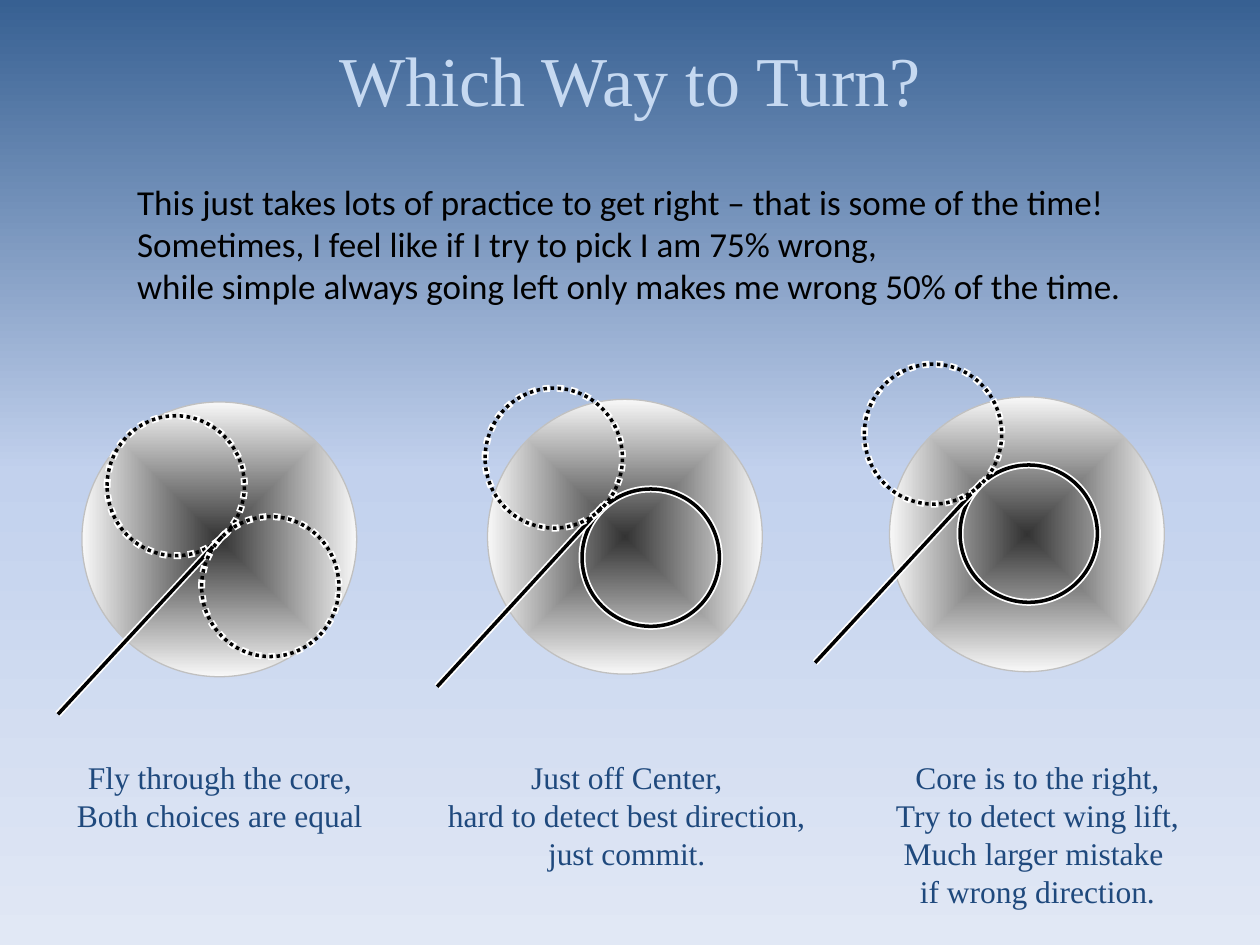
from lxml import etree
from pptx import Presentation
from pptx.dml.color import RGBColor
from pptx.enum.dml import MSO_LINE
from pptx.enum.shapes import MSO_CONNECTOR, MSO_SHAPE
from pptx.enum.text import MSO_ANCHOR, MSO_AUTO_SIZE, PP_ALIGN
from pptx.oxml.ns import qn
from pptx.util import Pt

OVAL = MSO_SHAPE.OVAL
STRAIGHT = MSO_CONNECTOR.STRAIGHT
DOTTED = MSO_LINE.ROUND_DOT
CENTER = PP_ALIGN.CENTER
LEFT = PP_ALIGN.LEFT
MIDDLE = MSO_ANCHOR.MIDDLE
TOP = MSO_ANCHOR.TOP
GROW = MSO_AUTO_SIZE.SHAPE_TO_FIT_TEXT

SERIF = "Times New Roman"
SANS = "Calibri"
COLORS = {
    "sky_top": "376092", "sky_middle": "C2D1ED", "sky_bottom": "E1E8F5",
    "title": "C6D9F1", "caption": "1F497D", "ink": "000000", "halo": "FFFFFF",
    "core": "333333", "edge": "F8F8F8", "rim": "C0C0C0",
}
STROKES = [("halo", 4), ("ink", 2)]
CORE_SIZE = 157
RING_WIDTH = 78.5
DOTTED_HEIGHT = 80
CAPTION_TOP = 429.8

THERMALS = [
    {
        "core": (46.8, 229.7),
        "rings": [(61.2, 237.6, True), (115.2, 295.2, True)],
        "path": (128.9, 304.6, 33.1, 408.2),
        "caption": (36, 179.3),
        "lines": ["Fly through the core,", "Both choices are equal"],
    },
    {
        "core": (278.6, 228.2),
        "rings": [(332.6, 279.4, False), (277.2, 221.8, True)],
        "path": (344.9, 288.7, 249.8, 392.4),
        "caption": (247.7, 221),
        "lines": ["Just off Center,", "hard to detect best direction,", "just commit."],
    },
    {
        "core": (508.3, 226.8),
        "rings": [(548.6, 265.7, False), (493.9, 208.1, True)],
        "path": (561.6, 275, 465.8, 378.7),
        "caption": (504, 177.8),
        "lines": ["Core is to the right,", "Try to detect wing lift,",
                  "Much larger mistake ", "if wrong direction."],
    },
]
ADVICE = [
    "This just takes lots of practice to get right – that is some of the time!",
    "Sometimes, I feel like if I try to pick I am 75% wrong, \n"
    "while simple always going left only makes me wrong 50% of the time.",
]


def color(name):
    return RGBColor.from_string(COLORS[name])


def fill_gradient(gradient, stops, radial=False):
    for child in list(gradient):
        gradient.remove(child)
    stop_list = etree.SubElement(gradient, qn("a:gsLst"))
    for position, name in stops:
        stop = etree.SubElement(stop_list, qn("a:gs"), pos=str(position * 1000))
        etree.SubElement(stop, qn("a:srgbClr"), val=COLORS[name])
    if radial:
        shading = etree.SubElement(gradient, qn("a:path"), path="shape")
        center = dict.fromkeys("ltrb", "50000")
        etree.SubElement(shading, qn("a:fillToRect"), **center)
    else:
        etree.SubElement(gradient, qn("a:lin"), ang="5400000", scaled="0")


def set_background(slide):
    slide.background.fill.gradient()
    gradient = slide.element.xpath(".//p:bgPr/a:gradFill")[0]
    fill_gradient(gradient, [(0, "sky_top"), (50, "sky_middle"), (100, "sky_bottom")])


def set_line(line, name, width):
    line.color.rgb = color(name)
    line.width = Pt(width)


def write_text(frame, lines, font, size, name, alignment):
    for index, text in enumerate(lines):
        paragraph = frame.add_paragraph() if index else frame.paragraphs[0]
        paragraph.alignment = alignment
        for part_index, part in enumerate(text.split("\n")):
            if part_index:
                paragraph.add_line_break()
            run = paragraph.add_run()
            run.text = part
            run.font.name = font
            run.font.size = Pt(size)
            run.font.color.rgb = color(name)


def add_title(slide, text):
    title = slide.shapes.title
    title.left, title.top, title.width, title.height = Pt(36), Pt(0), Pt(648), Pt(90)
    title.text_frame.vertical_anchor = MIDDLE
    write_text(title.text_frame, [text], SERIF, 40, "title", CENTER)


def add_text(shapes, box, lines, font, size, name, alignment):
    frame = shapes.add_textbox(*map(Pt, box)).text_frame
    frame.word_wrap = False
    frame.auto_size = GROW
    frame.vertical_anchor = TOP
    write_text(frame, lines, font, size, name, alignment)


def add_core(shapes, left, top):
    core = shapes.add_shape(OVAL, Pt(left), Pt(top), Pt(CORE_SIZE), Pt(CORE_SIZE))
    core.shadow.inherit = False
    core.fill.gradient()
    gradient = core.element.xpath("./p:spPr/a:gradFill")[0]
    fill_gradient(gradient, [(0, "core"), (100, "edge")], radial=True)
    set_line(core.line, "rim", 0.75)


def add_ring(shapes, left, top, dotted):
    height = DOTTED_HEIGHT if dotted else RING_WIDTH
    for name, width in STROKES:
        ring = shapes.add_shape(OVAL, Pt(left), Pt(top), Pt(RING_WIDTH), Pt(height))
        ring.shadow.inherit = False
        ring.fill.background()
        set_line(ring.line, name, width)
        if dotted:
            ring.line.dash_style = DOTTED


def add_flight_line(shapes, ends):
    for name, width in STROKES:
        connector = shapes.add_connector(STRAIGHT, *map(Pt, ends))
        set_line(connector.line, name, width)
        properties = connector.element.find(qn("p:spPr"))
        etree.SubElement(properties, qn("a:effectLst"))


def add_thermal(slide, thermal):
    shapes = slide.shapes.add_group_shape().shapes
    add_core(shapes, *thermal["core"])
    first_ring, second_ring = thermal["rings"]
    add_ring(shapes, *first_ring)
    add_flight_line(shapes, thermal["path"])
    add_ring(shapes, *second_ring)
    left, width = thermal["caption"]
    lines = thermal["lines"]
    box = (left, CAPTION_TOP, width, 7.9 + 21.6 * len(lines))
    add_text(shapes, box, lines, SERIF, 18, "caption", CENTER)


def main():
    presentation = Presentation()
    presentation.slide_width, presentation.slide_height = Pt(720), Pt(540)
    slide = presentation.slides.add_slide(presentation.slide_layouts[5])
    set_background(slide)
    add_title(slide, "Which Way to Turn?")
    for thermal in THERMALS:
        add_thermal(slide, thermal)
    add_text(slide.shapes, (71.3, 99.4, 581.8, 79.9), ADVICE, SANS, 20, "ink", LEFT)
    presentation.save("out.pptx")


if __name__ == "__main__":
    main()
